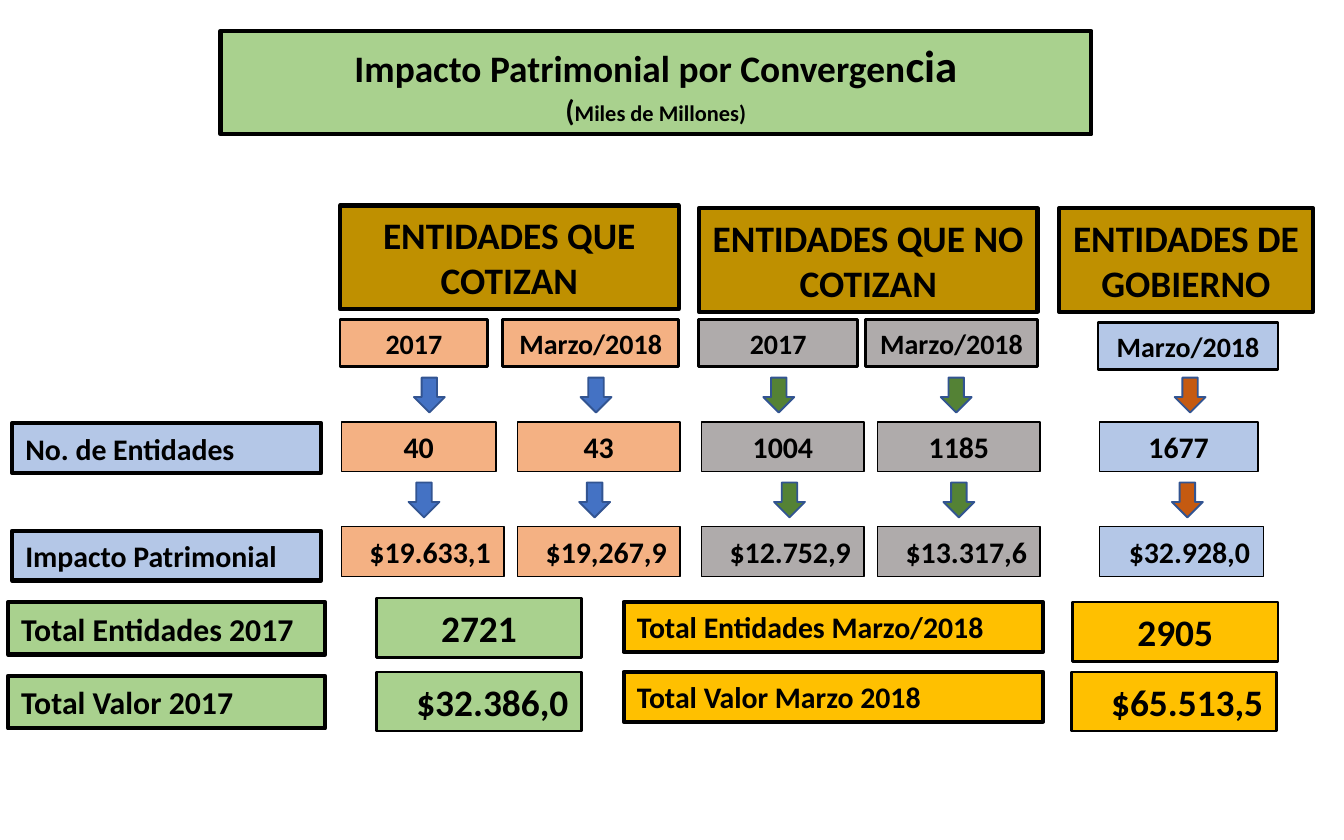
import pptx
import pptx.dml.color
import pptx.enum.shapes
import pptx.enum.text
import pptx.util

COLORS = {
    "black": "000000", "green": "A9D18E", "gold": "BF9000", "yellow": "FFC000",
    "orange": "F4B183", "gray": "AFABAB", "blue": "B4C7E7",
    "blue arrow": "4472C4", "green arrow": "548235", "rust arrow": "C55A11",
    "arrow line": "325491",
}
SHAPES = pptx.enum.shapes.MSO_SHAPE
ALIGN = pptx.enum.text.PP_ALIGN
GRID_COLUMNS, GRID_ROWS = 100, 62.5


class Board:
    """Holds the style and the slide; lengths are grid columns and rows."""

    def __init__(self, presentation):
        self.font = "Calibri"
        self.cell_width = presentation.slide_width / GRID_COLUMNS
        self.cell_height = presentation.slide_height / GRID_ROWS
        self.slide = presentation.slides.add_slide(presentation.slide_layouts[5])

    def area(self, column, row, columns, rows):
        return (round(column * self.cell_width), round(row * self.cell_height),
                round(columns * self.cell_width), round(rows * self.cell_height))

    def color(self, name):
        return pptx.dml.color.RGBColor.from_string(COLORS[name])

    def paint(self, shape, fill, line, weight):
        shape.fill.solid()
        shape.fill.fore_color.rgb = self.color(fill)
        shape.line.color.rgb = self.color(line)
        shape.line.width = pptx.util.Pt(weight)

    def frame(self, shape):
        frame = shape.text_frame
        frame.word_wrap = True
        frame.auto_size = pptx.enum.text.MSO_AUTO_SIZE.NONE
        frame.vertical_anchor = pptx.enum.text.MSO_ANCHOR.MIDDLE
        return frame

    def style(self, paragraph, align):
        paragraph.alignment = align
        paragraph.font.name = self.font
        paragraph.font.bold = True
        paragraph.font.color.rgb = self.color("black")

    def title(self, place, lines, fill):
        """Each line is a list of (text, size) runs."""
        shape = self.slide.shapes.title
        shape.left, shape.top, shape.width, shape.height = self.area(*place)
        self.paint(shape, fill, "black", 2.25)
        frame = self.frame(shape)
        for index, line in enumerate(lines):
            paragraph = frame.add_paragraph() if index else frame.paragraphs[0]
            self.style(paragraph, ALIGN.CENTER)
            for text, size in line:
                run = paragraph.add_run()
                run.text = text
                run.font.size = pptx.util.Pt(size)

    def box(self, place, text, fill, size=16, weight=0.75, align=ALIGN.CENTER):
        shape = self.slide.shapes.add_shape(SHAPES.RECTANGLE, *self.area(*place))
        shape.shadow.inherit = False
        self.paint(shape, fill, "black", weight)
        paragraph = self.frame(shape).paragraphs[0]
        paragraph.text = text
        self.style(paragraph, align)
        paragraph.font.size = pptx.util.Pt(size)

    def arrow(self, column, row, fill):
        shape = self.slide.shapes.add_shape(
            SHAPES.DOWN_ARROW, *self.area(column, row, 2.3, 2.6))
        shape.shadow.inherit = False
        self.paint(shape, fill, "arrow line", 1)


def main():
    presentation = pptx.Presentation()
    presentation.slide_width = pptx.util.Inches(10)
    presentation.slide_height = pptx.util.Inches(6.25)
    board = Board(presentation)

    board.title((16.4, 2.3, 64.8, 7.7), [
        [("Impacto Patrimonial por Convergen", 20), ("cia", 24)],
        [("(", 16), ("Miles de Millones)", 12)],
    ], "green")

    for column, row, columns, text in [
        (25.3, 15.3, 25.2, "ENTIDADES QUE COTIZAN"),
        (52, 15.5, 25.2, "ENTIDADES QUE NO COTIZAN"),
        (78.8, 15.5, 18.9, "ENTIDADES DE GOBIERNO"),
    ]:
        board.box((column, row, columns, 7.7), text, "gold", 20, 2.25)

    # Fill, arrow fill, then for the period, count and impact: left, width, text;
    # last, the left edges of the two arrows.
    periods = [
        ("orange", "blue arrow", (25.3, 11, "2017"), (25.4, 11.5, "40"),
         (25.4, 12.1, "$19.633,1"), (30.8, 30.4)),
        ("orange", "blue arrow", (37.4, 13.1, "Marzo/2018"), (38.5, 12.1, "43"),
         (38.5, 12.1, "$19,267,9"), (43.2, 43.1)),
        ("gray", "green arrow", (52, 11.8, "2017"), (52.2, 12.1, "1004"),
         (52.2, 12.1, "$12.752,9"), (56.8, 57.6)),
        ("gray", "green arrow", (64.4, 12.8, "Marzo/2018"), (65.3, 12.1, "1185"),
         (65.3, 12.1, "$13.317,6"), (70, 70.2)),
        ("blue", "rust arrow", (81.7, 13.4, "Marzo/2018"), (81.8, 11.8, "1677"),
         (81.8, 12.2, "$32.928,0"), (87.4, 87.2)),
    ]
    levels = [
        (23.8, 3.5, 15, 1.5, ALIGN.CENTER),
        (31.4, 3.7, 16, 0.75, ALIGN.CENTER),
        (39.2, 3.7, 16, 0.75, ALIGN.RIGHT),
    ]
    for fill, arrow_fill, *cells, arrow_columns in periods:
        for (column, columns, text), level in zip(cells, levels):
            row, rows, size, weight, align = level
            if fill == "blue" and text == "Marzo/2018":
                row += 0.2
            board.box((column, row, columns, rows), text, fill, size, weight, align)
        for column, row in zip(arrow_columns, (28.1, 35.9)):
            board.arrow(column, row, arrow_fill)

    for column, row, columns, rows, text, fill, size in [
        (0.9, 31.5, 23, 3.7, "No. de Entidades", "blue", 16),
        (0.9, 39.5, 23, 3.7, "Impacto Patrimonial", "blue", 16),
        (0.6, 44.8, 23.6, 3.9, "Total Entidades 2017", "green", 17),
        (0.6, 50.3, 23.6, 3.9, "Total Valor 2017", "green", 17),
        (46.4, 44.8, 31.2, 3.7, "Total Entidades Marzo/2018", "yellow", 16),
        (46.4, 50, 31.2, 3.7, "Total Valor Marzo 2018", "yellow", 16),
    ]:
        board.box((column, row, columns, rows), text, fill, size, 2.25, ALIGN.LEFT)

    for column, row, text, fill, align in [
        (28, 44.5, "2721", "green", ALIGN.CENTER),
        (28, 50, "$32.386,0", "green", ALIGN.RIGHT),
        (79.8, 44.8, "2905", "yellow", ALIGN.CENTER),
        (79.7, 50, "$65.513,5", "yellow", ALIGN.RIGHT),
    ]:
        board.box((column, row, 15.3, 4.4), text, fill, 20, 1.5, align)

    presentation.save("out.pptx")


if __name__ == "__main__":
    main()
